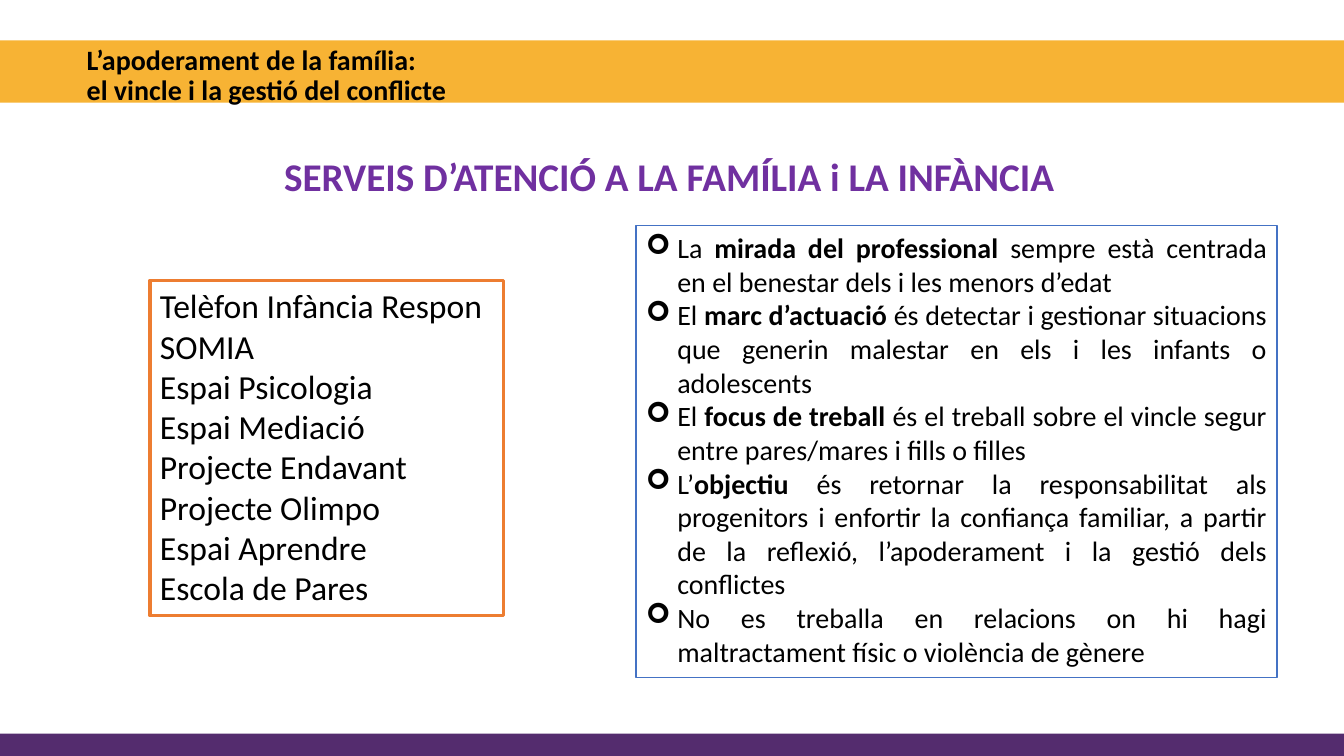
import pptx
import pptx.util
import pptx.dml.color
import pptx.enum.shapes
import pptx.enum.text
from lxml import etree

Cm, Pt = pptx.util.Cm, pptx.util.Pt
RGBColor = pptx.dml.color.RGBColor
PP_ALIGN = pptx.enum.text.PP_ALIGN
MSO_ANCHOR = pptx.enum.text.MSO_ANCHOR

BLACK = RGBColor(0x00, 0x00, 0x00)
WHITE = RGBColor(0xFF, 0xFF, 0xFF)
AMBER = RGBColor(0xF7, 0xB3, 0x34)
PLUM = RGBColor(0x54, 0x2C, 0x6E)
PURPLE = RGBColor(0x70, 0x30, 0xA0)
ORANGE = RGBColor(0xED, 0x7D, 0x31)
BLUE = RGBColor(0x44, 0x72, 0xC4)

SERVICES = [
    "Telèfon Infància Respon", "SOMIA", "Espai Psicologia", "Espai Mediació",
    "Projecte Endavant", "Projecte Olimpo", "Espai Aprendre", "Escola de Pares",
]
# Each principle: lead-in, bold key words, remainder
PRINCIPLES = [
    ("La ", "mirada del professional ",
     "sempre està centrada en el benestar dels i les menors d’edat"),
    ("El ", "marc d’actuació ",
     "és detectar i gestionar situacions que generin malestar en els i les infants o adolescents"),
    ("El ", "focus de treball ",
     "és el treball sobre el vincle segur entre pares/mares i fills o filles"),
    ("L’", "objectiu",
     " és retornar la responsabilitat als progenitors i enfortir la confiança familiar, "
     "a partir de la reflexió, l’apoderament i la gestió dels conflictes"),
    ("No es treballa en relacions on hi hagi maltractament físic o violència de gènere",),
]


def add_box(left, top, width, height, fill, line=None, line_width=1):
    sp = slide.shapes.add_shape(pptx.enum.shapes.MSO_SHAPE.RECTANGLE,
                                Cm(left), Cm(top), Cm(width), Cm(height))
    sp.shadow.inherit = False
    sp.fill.solid()
    sp.fill.fore_color.rgb = fill
    if line is None:
        sp.line.fill.background()
    else:
        sp.line.color.rgb = line
        sp.line.width = Pt(line_width)
    sp.text_frame.word_wrap = True
    return sp


def format_run(r, size, color=BLACK, bold=False):
    r.font.name = "Calibri"
    r.font.size = Pt(size)
    r.font.bold = bold
    r.font.color.rgb = color


prs = pptx.Presentation()
prs.slide_width, prs.slide_height = Cm(33.87), Cm(19.05)
slide = prs.slides.add_slide(prs.slide_layouts[5])

# Bands
add_box(-0.1, 1.02, 34.09, 1.57, AMBER)
add_box(0, 18.49, 34.09, 0.58, PLUM)

# Title, brought in front of the bands
title = slide.shapes.title
slide.shapes._spTree.append(title._element)
title.left, title.top, title.width, title.height = Cm(1.93), Cm(1.02), Cm(19.53), Cm(1.83)
tf = title.text_frame
tf.text = "L’apoderament de la família:\vel vincle i la gestió del conflicte"
tf.auto_size = pptx.enum.text.MSO_AUTO_SIZE.NONE
tf.vertical_anchor = MSO_ANCHOR.MIDDLE
p = tf.paragraphs[0]
p.alignment = PP_ALIGN.LEFT
p.line_spacing = 0.9
for r in p.runs:
    format_run(r, 20, bold=True)

# Heading
heading = slide.shapes.add_textbox(Cm(6.91), Cm(3.71), Cm(20.42), Cm(2.49))
tf = heading.text_frame
tf.word_wrap = True
tf.text = "SERVEIS D’ATENCIÓ A LA FAMÍLIA i LA INFÀNCIA"
format_run(tf.paragraphs[0].runs[0], 28, PURPLE, bold=True)

# Services
tf = add_box(3.78, 7.06, 8.92, 8.46, WHITE, ORANGE, 2.25).text_frame
tf.vertical_anchor = MSO_ANCHOR.TOP
tf.text = "\n".join(SERVICES)
for p in tf.paragraphs:
    p.alignment = PP_ALIGN.LEFT
    format_run(p.runs[0], 24)

# Principles
tf = add_box(16.03, 5.69, 16.15, 11.38, WHITE, BLUE).text_frame
tf.vertical_anchor = MSO_ANCHOR.TOP
for i, parts in enumerate(PRINCIPLES):
    p = tf.add_paragraph() if i else tf.paragraphs[0]
    p.alignment = PP_ALIGN.JUSTIFY
    pPr = p._p.get_or_add_pPr()
    pPr.set("marL", str(Cm(0.79)))
    pPr.set("indent", str(-Cm(0.79)))
    etree.SubElement(pPr, pptx.oxml.ns.qn("a:buFont")).set("typeface", "Wingdings")
    etree.SubElement(pPr, pptx.oxml.ns.qn("a:buChar")).set("char", "➢")
    for j, text in enumerate(parts):
        r = p.add_run()
        r.text = text
        format_run(r, 20, bold=j == 1)

prs.save("out.pptx")
